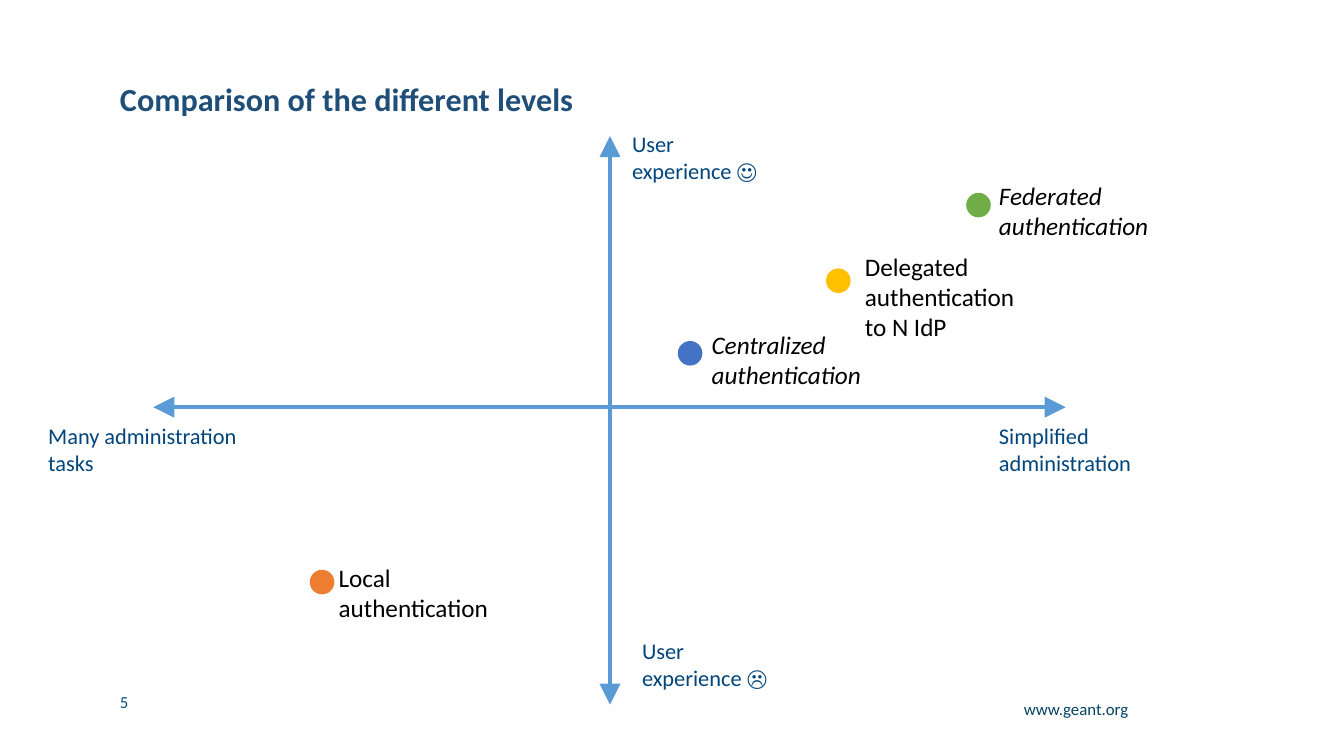
from dataclasses import dataclass

from lxml import etree
from pptx import Presentation
from pptx.dml.color import RGBColor
from pptx.enum.shapes import MSO_CONNECTOR, MSO_SHAPE
from pptx.enum.text import MSO_ANCHOR, PP_ALIGN
from pptx.oxml.ns import qn
from pptx.slide import Slide
from pptx.text.text import TextFrame
from pptx.util import Inches, Pt

STRAIGHT = MSO_CONNECTOR.STRAIGHT
OVAL = MSO_SHAPE.OVAL
MIDDLE = MSO_ANCHOR.MIDDLE
LEFT, RIGHT = PP_ALIGN.LEFT, PP_ALIGN.RIGHT

FONT = "Calibri"
DOT_SIZE = 0.23
COLOURS = {
    "title": "1F4E79",
    "axis": "5B9BD5",
    "axis label": "00457C",
    "level label": "000000",
    "page number": "065081",
    "website": "03435F",
    "local": "ED7D31",
    "centralized": "4472C4",
    "delegated": "FFC000",
    "federated": "70AD47",
}


@dataclass(frozen=True)
class Label:
    text: str
    left: float
    top: float
    width: float
    height: float
    size: int = 16
    colour: str = "axis label"
    bold: bool = False
    italic: bool = False
    align: PP_ALIGN = LEFT
    line_spacing: float = 1.0


@dataclass(frozen=True)
class Level:
    dot_colour: str
    dot_left: float
    dot_top: float
    label: Label


@dataclass(frozen=True)
class Axis:
    start: tuple[float, float]
    end: tuple[float, float]


def level_label(text: str, left: float, top: float, width: float,
                height: float = 0.71, italic: bool = False) -> Label:
    return Label(text, left, top, width, height, 18, "level label", italic=italic)


TITLE = Label("Comparison of the different levels", 1.09, 0.77, 10.82, 0.47,
              23, "title", bold=True, line_spacing=0.9)
FOOTERS = [
    Label("5", 1.09, 6.81, 1.45, 0.3, 12, "page number"),
    Label("www.geant.org", 9.61, 6.91, 1.68, 0.37, 12, "website",
          align=RIGHT, line_spacing=0.9),
]
AXES = [
    Axis((1.52, 4.04), (10.57, 4.04)),
    Axis((6.05, 6.99), (6.05, 1.35)),
]
AXIS_LABELS = [
    Label("User experience ☺", 6.17, 1.24, 1.52, 0.64),
    Label("User experience ☹", 6.27, 6.27, 1.57, 0.64),
    Label("Many administration tasks", 0.38, 4.14, 2.12, 0.64),
    Label("Simplified administration", 9.81, 4.14, 1.9, 0.64),
]
LEVELS = [
    Level("local", 3.08, 5.66,
          level_label("Local authentication", 3.26, 5.53, 1.76)),
    Level("centralized", 6.73, 3.39,
          level_label("Centralized authentication", 6.96, 3.22, 1.83, italic=True)),
    Level("delegated", 8.2, 2.67,
          level_label("Delegated authentication to N IdP", 8.48, 2.44, 1.73, 1.01)),
    Level("federated", 9.59, 1.92,
          level_label("Federated authentication", 9.81, 1.74, 1.7, italic=True)),
]


def rgb(name: str) -> RGBColor:
    return RGBColor.from_string(COLOURS[name])


def write_label(frame: TextFrame, label: Label) -> None:
    frame.word_wrap = True
    paragraph = frame.paragraphs[0]
    paragraph.alignment = label.align
    paragraph.line_spacing = label.line_spacing
    run = paragraph.add_run()
    run.text = label.text
    run.font.name = FONT
    run.font.size = Pt(label.size)
    run.font.bold = label.bold
    run.font.italic = label.italic
    run.font.color.rgb = rgb(label.colour)


def add_label(slide: Slide, label: Label) -> None:
    box = slide.shapes.add_textbox(Inches(label.left), Inches(label.top),
                                   Inches(label.width), Inches(label.height))
    write_label(box.text_frame, label)


def set_title(slide: Slide, label: Label) -> None:
    title = slide.shapes.title
    title.left, title.top = Inches(label.left), Inches(label.top)
    title.width, title.height = Inches(label.width), Inches(label.height)
    title.text_frame.vertical_anchor = MIDDLE
    write_label(title.text_frame, label)


def add_axis(slide: Slide, axis: Axis) -> None:
    """Draw a line with a large arrowhead at each end."""
    connector = slide.shapes.add_connector(
        STRAIGHT, *(Inches(value) for value in axis.start + axis.end))
    connector.line.color.rgb = rgb("axis")
    connector.line.width = Pt(3)
    outline = connector.line._get_or_add_ln()
    for end in ("a:headEnd", "a:tailEnd"):
        etree.SubElement(outline, qn(end), type="triangle", w="lg", len="lg")
    etree.SubElement(connector._element.spPr, qn("a:effectLst"))


def add_level(slide: Slide, level: Level) -> None:
    dot = slide.shapes.add_shape(OVAL, Inches(level.dot_left), Inches(level.dot_top),
                                 Inches(DOT_SIZE), Inches(DOT_SIZE))
    dot.shadow.inherit = False
    dot.fill.solid()
    dot.fill.fore_color.rgb = rgb(level.dot_colour)
    dot.line.color.rgb = rgb(level.dot_colour)
    dot.line.width = Pt(1)
    add_label(slide, level.label)


def main() -> None:
    presentation = Presentation()
    presentation.slide_width = Inches(13.33)
    presentation.slide_height = Inches(7.5)
    title_only = presentation.slide_layouts[5]
    slide = presentation.slides.add_slide(title_only)

    set_title(slide, TITLE)
    for axis in AXES:
        add_axis(slide, axis)
    for label in AXIS_LABELS + FOOTERS:
        add_label(slide, label)
    for level in LEVELS:
        add_level(slide, level)

    presentation.save("out.pptx")


if __name__ == "__main__":
    main()
